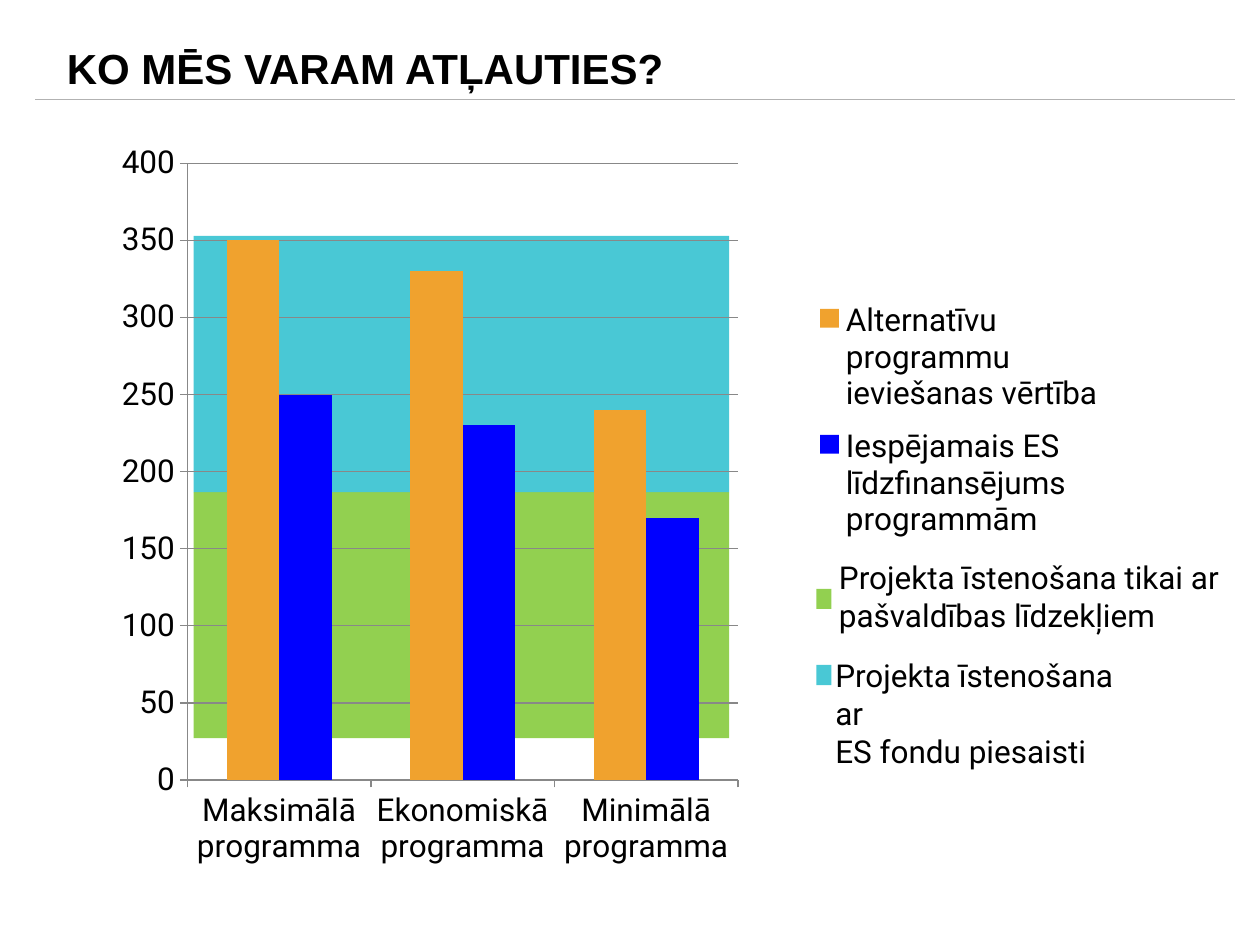
import pptx
import pptx.chart.data
import pptx.dml.color
import pptx.enum.chart
import pptx.enum.shapes
import pptx.enum.text
import pptx.oxml
import pptx.oxml.ns
import pptx.util

Pt = pptx.util.Pt
RGBColor = pptx.dml.color.RGBColor

BLACK = RGBColor(0x00, 0x00, 0x00)
GREY = RGBColor(0x88, 0x88, 0x88)
LIGHT_GREY = RGBColor(0xB2, 0xB2, 0xB2)
GREEN = RGBColor(0x92, 0xD0, 0x50)
TURQUOISE = RGBColor(0x49, 0xC8, 0xD5)
ORANGE = RGBColor(0xF0, 0xA2, 0x2E)
BLUE = RGBColor(0x00, 0x00, 0xFF)

TITLE = "KO MĒS VARAM ATĻAUTIES?"
CATEGORIES = ["Maksimālā programma", "Ekonomiskā programma", "Minimālā programma"]
SERIES = [
    ("Alternatīvu programmu ieviešanas vērtība", (350, 330, 240), ORANGE),
    ("Iespējamais ES līdzfinansējums programmām", (250, 230, 170), BLUE),
]
# Each funding band: colour, top and height, legend marker top, legend label box, label lines
BANDS = [
    (GREEN, 281.2, 140.6, 336.5, (472.3, 315.4, 236.2, 51),
     ["Projekta īstenošana tikai ar", "pašvaldības līdzekļiem"]),
    (TURQUOISE, 134.8, 146.4, 380, (470.2, 371.5, 186.5, 51),
     ["Projekta īstenošana ar", "ES fondu piesaisti"]),
]
BAND_LEFT, BAND_WIDTH = 110.7, 306
MARKER_LEFT, MARKER_WIDTH, MARKER_HEIGHT = 466.5, 8.6, 11.5
CHART_BOX = (54, 82.8, 609.8, 425.5)
PLOT_LAYOUT = (0.087, 0.024, 0.516, 0.829)
LEGEND_LAYOUT = (0.66, 0.19, 0.3, 0.36)


def add_rectangle(slide, color, *box):
    shape = slide.shapes.add_shape(
        pptx.enum.shapes.MSO_SHAPE.RECTANGLE, *map(Pt, box))
    shape.shadow.inherit = False
    shape.fill.solid()
    shape.fill.fore_color.rgb = color
    shape.line.fill.background()


def format_text(text_frame, font_name, size, bold=False):
    for paragraph in text_frame.paragraphs:
        paragraph.alignment = pptx.enum.text.PP_ALIGN.LEFT
        for run in paragraph.runs:
            run.font.name = font_name
            run.font.size = Pt(size)
            run.font.bold = bold
            run.font.color.rgb = BLACK


def make_layout(fractions, inner=False):
    """Return a manual chart layout with x, y, width and height as fractions."""
    target = '<c:layoutTarget val="inner"/>' if inner else ""
    modes = '<c:xMode val="edge"/><c:yMode val="edge"/>'
    sizes = "".join(f'<c:{name} val="{value}"/>' for name, value in zip("xywh", fractions))
    return pptx.oxml.parse_xml(
        f'<c:layout {pptx.oxml.ns.nsdecls("c")}><c:manualLayout>'
        f"{target}{modes}{sizes}</c:manualLayout></c:layout>")


def set_layout(element, layout, index):
    for old_layout in element.findall(pptx.oxml.ns.qn("c:layout")):
        element.remove(old_layout)
    element.insert(index, layout)


def add_chart(slide):
    data = pptx.chart.data.CategoryChartData()
    data.categories = CATEGORIES
    for name, values, _ in SERIES:
        data.add_series(name, values)
    chart = slide.shapes.add_chart(
        pptx.enum.chart.XL_CHART_TYPE.COLUMN_CLUSTERED, *map(Pt, CHART_BOX), data).chart
    chart.has_title = False
    chart.font.name = "Roboto"
    chart.font.size = Pt(18)
    chart.font.color.rgb = BLACK

    plot = chart.plots[0]
    plot.vary_by_categories = False
    plot.gap_width = 150
    plot.overlap = 0
    for series, (_, _, color) in zip(plot.series, SERIES):
        series.format.fill.solid()
        series.format.fill.fore_color.rgb = color

    value_axis = chart.value_axis
    value_axis.minimum_scale, value_axis.maximum_scale = 0, 400
    value_axis.major_unit = 50
    value_axis.has_major_gridlines = True
    for part in (value_axis, chart.category_axis, value_axis.major_gridlines):
        part.format.line.color.rgb = GREY
        part.format.line.width = Pt(0.75)
    for axis in (value_axis, chart.category_axis):
        axis.major_tick_mark = pptx.enum.chart.XL_TICK_MARK.OUTSIDE

    chart.has_legend = True
    chart.legend.position = pptx.enum.chart.XL_LEGEND_POSITION.RIGHT
    chart.legend.include_in_layout = False
    plot_area = chart.element.find(".//" + pptx.oxml.ns.qn("c:plotArea"))
    legend = chart.element.find(".//" + pptx.oxml.ns.qn("c:legend"))
    set_layout(plot_area, make_layout(PLOT_LAYOUT, inner=True), 0)
    set_layout(legend, make_layout(LEGEND_LAYOUT), 1)


def add_title(slide):
    title = slide.shapes.title
    title.left, title.top, title.width, title.height = map(Pt, (31, 20.9, 360, 36))
    title.text_frame.text = TITLE
    title.text_frame.word_wrap = True
    title.text_frame.vertical_anchor = pptx.enum.text.MSO_ANCHOR.TOP
    format_text(title.text_frame, "Arial", 24, bold=True)
    rule = slide.shapes.add_connector(
        pptx.enum.shapes.MSO_CONNECTOR.STRAIGHT, *map(Pt, (20.2, 56.9, 705.6, 56.9)))
    rule.line.color.rgb = LIGHT_GREY
    rule.line.width = Pt(0.75)
    rule.element.spPr.append(
        pptx.oxml.parse_xml(f'<a:effectLst {pptx.oxml.ns.nsdecls("a")}/>'))


def main():
    presentation = pptx.Presentation()
    presentation.slide_width, presentation.slide_height = Pt(720), Pt(540)
    slide = presentation.slides.add_slide(presentation.slide_layouts[5])
    add_title(slide)
    for color, top, height, *_ in BANDS:
        add_rectangle(slide, color, BAND_LEFT, top, BAND_WIDTH, height)
    add_chart(slide)
    for color, _, _, marker_top, label_box, lines in BANDS:
        label = slide.shapes.add_textbox(*map(Pt, label_box))
        label.text_frame.word_wrap = True
        label.text_frame.text = "\n".join(lines)
        format_text(label.text_frame, "Roboto", 18)
        add_rectangle(slide, color, MARKER_LEFT, marker_top, MARKER_WIDTH, MARKER_HEIGHT)
    presentation.save("out.pptx")


if __name__ == "__main__":
    main()
